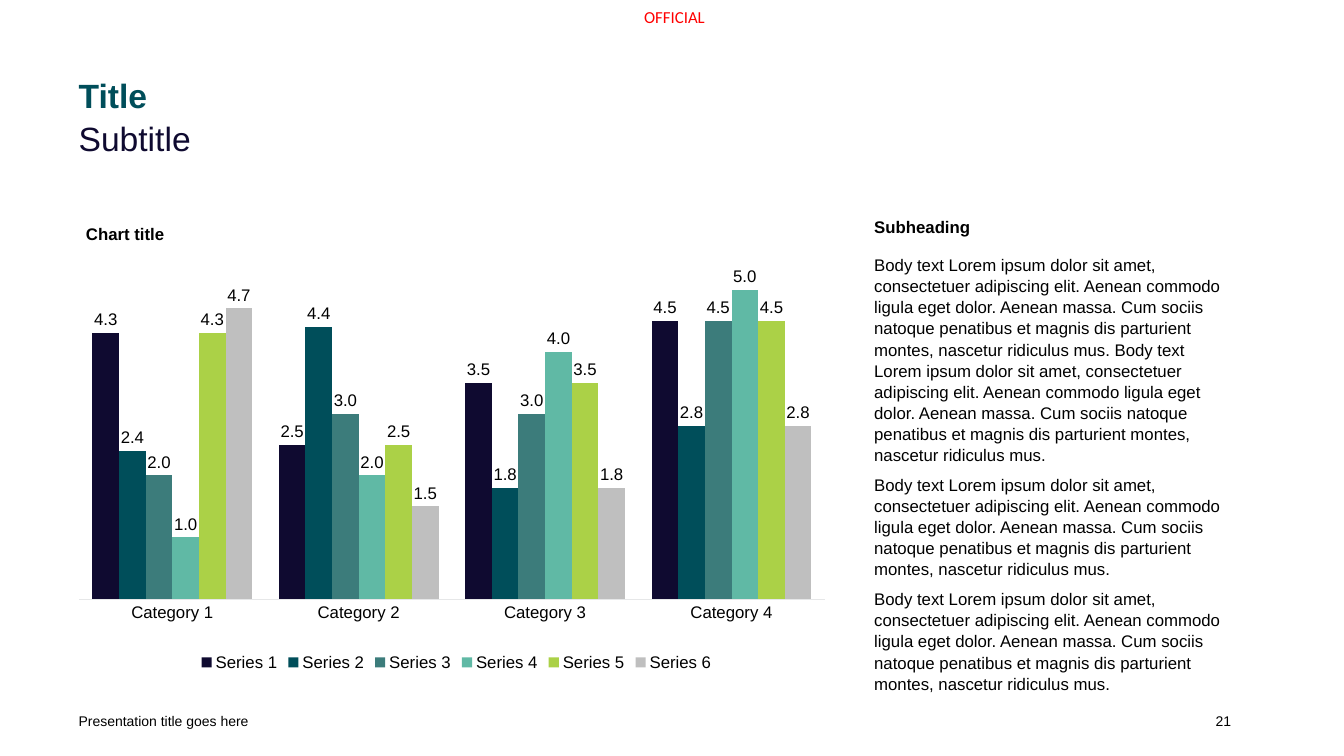
from lxml import etree
from pptx import Presentation
from pptx.chart.data import CategoryChartData
from pptx.dml.color import RGBColor
from pptx.enum.chart import XL_CHART_TYPE, XL_LABEL_POSITION, XL_LEGEND_POSITION, XL_TICK_MARK
from pptx.enum.text import MSO_ANCHOR, MSO_AUTO_SIZE, PP_ALIGN
from pptx.oxml.ns import qn
from pptx.util import Inches, Pt

COLUMNS = XL_CHART_TYPE.COLUMN_CLUSTERED
OUTSIDE_END = XL_LABEL_POSITION.OUTSIDE_END
LEGEND_BOTTOM = XL_LEGEND_POSITION.BOTTOM
NO_TICKS = XL_TICK_MARK.NONE
TOP, MIDDLE = MSO_ANCHOR.TOP, MSO_ANCHOR.MIDDLE
LEFT, CENTER, RIGHT = PP_ALIGN.LEFT, PP_ALIGN.CENTER, PP_ALIGN.RIGHT

THEME = {
    "font": "Arial", "marking_font": "Calibri",
    "heading": 24, "text": 12, "footer": 10,
    "navy": "0F0A30", "teal": "004E5A", "black": "000000",
    "red": "FF0000", "axis": "E6E7E8",
    "series": ["0F0A30", "004E5A", "3C7C7B", "60B9A5", "ABD147", "BFBFBF"],
}
MARGIN, RIGHT_EDGE = 0.78, 12.21
CONTENT_TOP, CONTENT_HEIGHT = 2.14, 4.56
CHART_WIDTH, BODY_LEFT = 7.49, 8.67
FOOTER_TOP, FOOTER_HEIGHT = 6.95, 0.4

LOREM = ("Body text Lorem ipsum dolor sit amet, consectetuer adipiscing elit. "
         "Aenean commodo ligula eget dolor. Aenean massa. Cum sociis natoque "
         "penatibus et magnis dis parturient montes, nascetur ridiculus mus.")


def write(holder, box, lines, size, color, bold=False, align=LEFT, anchor=TOP,
          spacing=1.0, after=0, font=THEME["font"]):
    """Place a text holder at box (inches) and fill it with unbulleted lines."""
    holder.left, holder.top, holder.width, holder.height = map(Inches, box)
    frame = holder.text_frame
    frame.margin_left = frame.margin_top = frame.margin_right = frame.margin_bottom = 0
    frame.word_wrap = True
    frame.auto_size = MSO_AUTO_SIZE.NONE
    frame.vertical_anchor = anchor
    frame.text = "\n".join(lines)
    for paragraph in frame.paragraphs:
        paragraph.alignment = align
        paragraph.line_spacing = spacing
        paragraph.space_before, paragraph.space_after = Pt(0), Pt(after)
        if holder.is_placeholder:
            properties = paragraph._p.get_or_add_pPr()
            properties.set("marL", "0")
            properties.set("indent", "0")
            etree.SubElement(properties, qn("a:buNone"))
        paragraph.font.name, paragraph.font.size = font, Pt(size)
        paragraph.font.bold = bold
        paragraph.font.color.rgb = RGBColor.from_string(color)
    return frame.paragraphs


def set_layout(parent, position, **shares):
    """Fix a chart part at shares of the chart's size."""
    layout = parent.find(qn("c:layout"))
    if layout is None:
        layout = etree.Element(qn("c:layout"))
        parent.insert(position, layout)
    manual = etree.SubElement(layout, qn("c:manualLayout"))
    if "w" in shares:
        etree.SubElement(manual, qn("c:layoutTarget")).set("val", "inner")
    for key in ("x", "y"):
        etree.SubElement(manual, qn(f"c:{key}Mode")).set("val", "edge")
    for key, share in shares.items():
        etree.SubElement(manual, qn(f"c:{key}")).set("val", str(share))


prs = Presentation()
prs.slide_width, prs.slide_height = Inches(13.33), Inches(7.5)
slide = prs.slides.add_slide(prs.slide_layouts.get_by_name("Two Content"))
title, subtitle, body = slide.placeholders

# Headings
heading_width = RIGHT_EDGE - MARGIN
write(title, (MARGIN, 0.79, heading_width, 0.35), ["Title"],
      THEME["heading"], THEME["teal"], bold=True, spacing=0.9)
write(subtitle, (MARGIN, 1.15, heading_width, 0.35), ["Subtitle"],
      THEME["heading"], THEME["navy"], spacing=1.05)

# Chart
chart_data = CategoryChartData(number_format="#,##0.0")
chart_data.categories = [f"Category {n}" for n in range(1, 5)]
series_values = [
    (4.3, 2.5, 3.5, 4.5),
    (2.4, 4.4, 1.8, 2.8),
    (2.0, 3.0, 3.0, 4.5),
    (1.0, 2.0, 4.0, 5.0),
    (4.3, 2.5, 3.5, 4.5),
    (4.7, 1.5, 1.8, 2.8),
]
for number, values in enumerate(series_values, 1):
    chart_data.add_series(f"Series {number}", values)
chart = slide.shapes.add_chart(
    COLUMNS, Inches(MARGIN), Inches(CONTENT_TOP),
    Inches(CHART_WIDTH), Inches(CONTENT_HEIGHT), chart_data).chart
chart.font.name, chart.font.size = THEME["font"], Pt(THEME["text"])
chart.font.color.rgb = RGBColor.from_string(THEME["black"])

chart.chart_title.text_frame.text = "Chart title"
chart_heading = chart.chart_title.text_frame.paragraphs[0].font
chart_heading.name, chart_heading.size = THEME["font"], Pt(THEME["text"])
chart_heading.bold = True
chart_heading.color.rgb = RGBColor.from_string(THEME["black"])
set_layout(chart.element.find(".//" + qn("c:title")), 1, x=0.005, y=0.01)
set_layout(chart.element.find(".//" + qn("c:plotArea")), 0,
           x=0, y=0.026, w=0.988, h=0.809)

chart.has_legend = True
chart.legend.position = LEGEND_BOTTOM
chart.legend.include_in_layout = False

chart.value_axis.visible = False
chart.value_axis.has_major_gridlines = False
chart.value_axis.minimum_scale, chart.value_axis.maximum_scale = 0, 6
chart.category_axis.major_tick_mark = NO_TICKS
axis_line = chart.category_axis.format.line
axis_line.color.rgb = RGBColor.from_string(THEME["axis"])
axis_line.width = Pt(0.75)

columns = chart.plots[0]
columns.vary_by_categories = False
columns.gap_width, columns.overlap = 100, 0
columns.has_data_labels = True
value_labels = columns.data_labels
value_labels.show_value = True
value_labels.position = OUTSIDE_END
value_labels.number_format = "#,##0.0"
value_labels.number_format_is_linked = False
for series, color in zip(columns.series, THEME["series"]):
    series.format.fill.solid()
    series.format.fill.fore_color.rgb = RGBColor.from_string(color)

# Body
subheading, *body_text = write(
    body, (BODY_LEFT, CONTENT_TOP, RIGHT_EDGE - BODY_LEFT, CONTENT_HEIGHT),
    ["Subheading", f"{LOREM} {LOREM}", LOREM, LOREM],
    THEME["text"], THEME["black"], spacing=1.05, after=6)
subheading.font.bold = True
subheading.space_after = Pt(12)
for paragraph in body_text:
    paragraph.level = 1

# Marking and footer
small_texts = [
    ("OFFICIAL", (6.17, 0.07, 1.04, 0.2), THEME["text"], THEME["red"],
     CENTER, TOP, THEME["marking_font"]),
    ("Presentation title goes here", (MARGIN, FOOTER_TOP, 4.5, FOOTER_HEIGHT),
     THEME["footer"], THEME["black"], LEFT, MIDDLE, THEME["font"]),
    ("21", (RIGHT_EDGE - 3, FOOTER_TOP, 3, FOOTER_HEIGHT),
     THEME["footer"], THEME["black"], RIGHT, MIDDLE, THEME["font"]),
]
for text, box, size, color, align, anchor, font in small_texts:
    holder = slide.shapes.add_textbox(*map(Inches, box))
    write(holder, box, [text], size, color, align=align, anchor=anchor, font=font)

prs.save("out.pptx")
